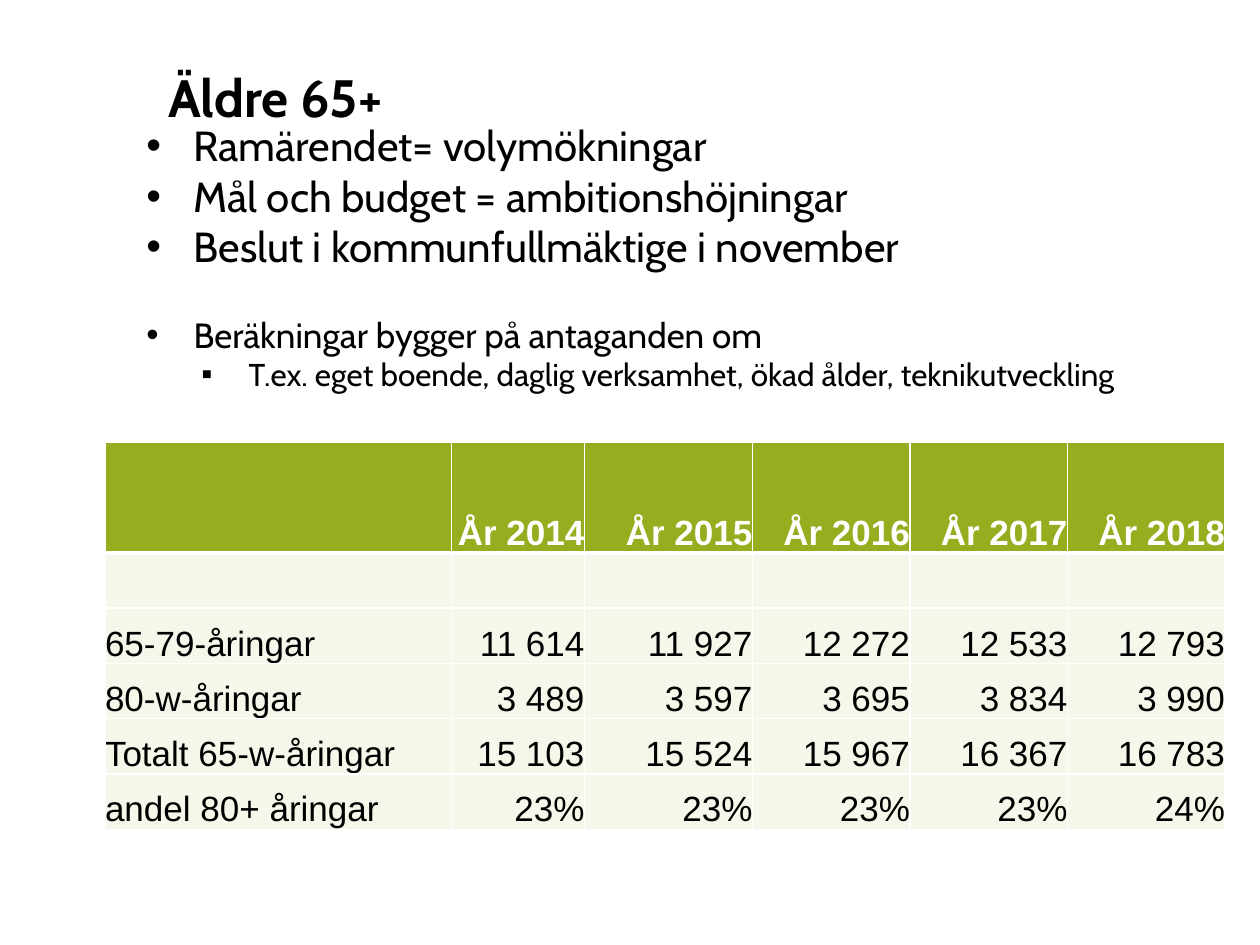
from lxml.etree import SubElement
from pptx import Presentation
from pptx.dml.color import RGBColor
from pptx.enum.text import MSO_ANCHOR, MSO_AUTO_SIZE, PP_ALIGN
from pptx.oxml.ns import qn
from pptx.util import Pt

BLACK = RGBColor(0x00, 0x00, 0x00)
WHITE = RGBColor(0xFF, 0xFF, 0xFF)
GREEN = RGBColor(0x97, 0xAC, 0x1E)
PALE = RGBColor(0xF5, 0xF7, 0xEA)


def write(para, text, size=20, face="Cabin", color=BLACK, bold=False,
          align=PP_ALIGN.LEFT, before=0):
    para.text = text
    para.alignment = align
    para.space_before = Pt(before)
    para.font.size = Pt(size)
    para.font.name = face
    para.font.color.rgb = color
    para.font.bold = bold


def border(cell, **widths):
    """Draw white cell edges; widths are in points, keyed L, R, T, B."""
    props = cell._tc.get_or_add_tcPr()
    for side, width in widths.items():
        line = SubElement(props, qn(f"a:ln{side}"), w=str(Pt(width)))
        fill = SubElement(line, qn("a:solidFill"))
        SubElement(fill, qn("a:srgbClr"), val=str(WHITE))


deck = Presentation()
deck.slide_width, deck.slide_height = Pt(720), Pt(540)
slide = deck.slides.add_slide(deck.slide_layouts[5])

# Title
title = slide.shapes.title
title.left, title.top, title.width, title.height = Pt(89), Pt(21.6), Pt(611), Pt(90)
frame = title.text_frame
frame.auto_size = MSO_AUTO_SIZE.NONE
frame.vertical_anchor = MSO_ANCHOR.MIDDLE
frame.margin_bottom = Pt(27)
write(frame.paragraphs[0], "Äldre 65+", size=30, bold=True)

# Bullets: text, size, left indent, mark, space before
points = [
    ("Ramärendet= volymökningar", 24, 27, "•", 0),
    ("Mål och budget = ambitionshöjningar", 24, 27, "•", 0),
    ("Beslut i kommunfullmäktige i november", 24, 27, "•", 0),
    ("Beräkningar bygger på antaganden om", 20, 27, "•", 24),
    ("T.ex. eget boende, daglig verksamhet, ökad ålder, teknikutveckling",
     18, 58.5, "▪", 0),
]
body = slide.shapes.add_textbox(Pt(76.5), Pt(65), Pt(611), Pt(356)).text_frame
body.word_wrap = True
for i, (text, size, indent, mark, gap) in enumerate(points):
    para = body.add_paragraph() if i else body.paragraphs[0]
    props = para._p.get_or_add_pPr()
    props.set("marL", str(Pt(indent)))
    props.set("indent", str(Pt(-27)))
    SubElement(props, qn("a:buFont"), typeface="Arial")
    SubElement(props, qn("a:buChar"), char=mark)
    para.level = 1 if mark == "▪" else 0
    write(para, text, size=size, before=gap)

# Table
rows = [
    ["", "År 2014", "År 2015", "År 2016", "År 2017", "År 2018"],
    [""] * 6,
    ["65-79-åringar", "11 614", "11 927", "12 272", "12 533", "12 793"],
    ["80-w-åringar", "3 489", "3 597", "3 695", "3 834", "3 990"],
    ["Totalt 65-w-åringar", "15 103", "15 524", "15 967", "16 367", "16 783"],
    ["andel 80+ åringar", "23%", "23%", "23%", "23%", "24%"],
]
widths = [198, 76, 96, 90, 90, 90]
heights = [63] + [31.6] * 5
table = slide.shapes.add_table(len(rows), len(widths), Pt(60), Pt(253),
                               Pt(sum(widths)), Pt(sum(heights))).table
table.horz_banding = False
for col, width in zip(table.columns, widths):
    col.width = Pt(width)
for r, (row, height) in enumerate(zip(rows, heights)):
    table.rows[r].height = Pt(height)
    head = r == 0
    for c, text in enumerate(row):
        cell = table.cell(r, c)
        border(cell, L=1, R=1, T=3 if r == 1 else 1, B=3 if head else 1)
        cell.fill.solid()
        cell.fill.fore_color.rgb = GREEN if head else PALE
        cell.vertical_anchor = MSO_ANCHOR.BOTTOM
        cell.margin_left = cell.margin_right = 0
        cell.margin_top = cell.margin_bottom = 0
        write(cell.text_frame.paragraphs[0], text, face="Arial", bold=head,
              color=WHITE if head else BLACK,
              align=PP_ALIGN.RIGHT if c else PP_ALIGN.LEFT)

deck.save("out.pptx")
